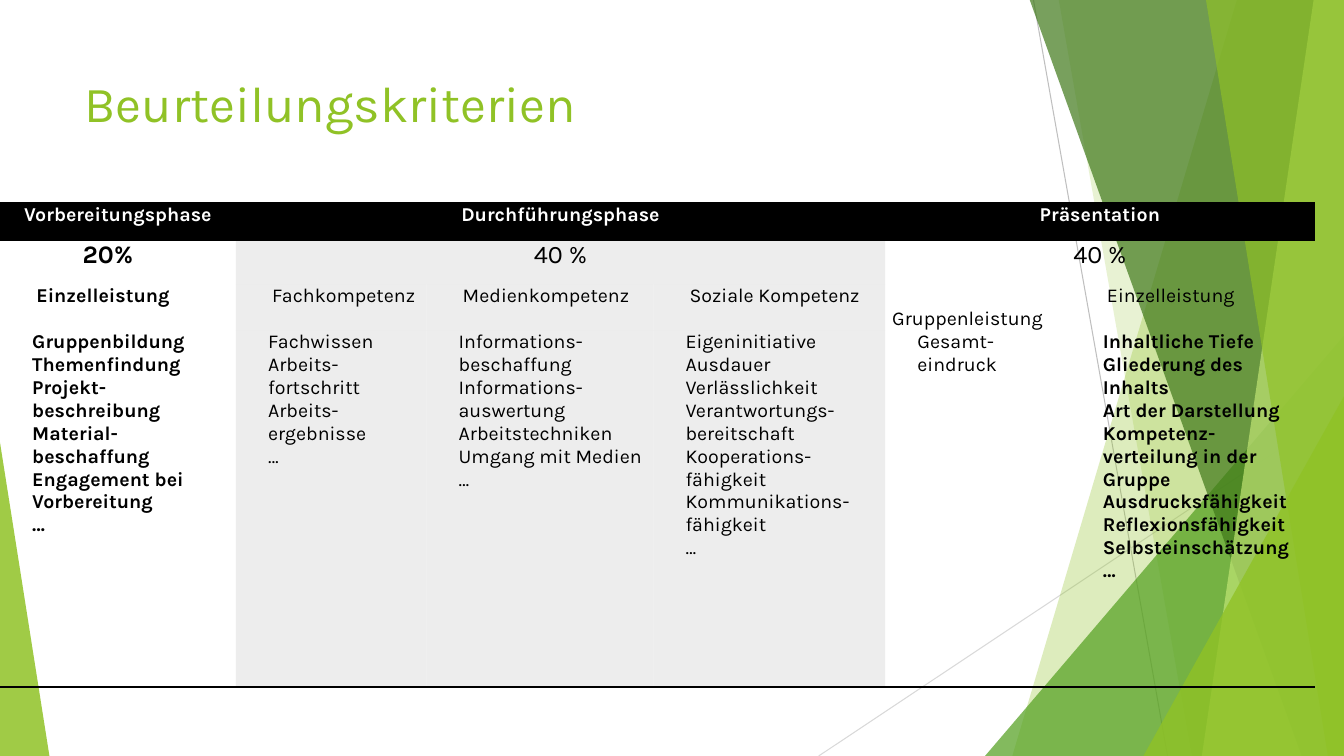
import pptx
import pptx.dml.color
import pptx.enum.shapes
import pptx.enum.text
import pptx.oxml
import pptx.oxml.ns
import pptx.util
from pptx.util import Inches

HUES = {
    "lime": "90C226", "leaf": "54A021", "dark": "3F7819", "pale": "C0E474",
    "black": "000000", "white": "FFFFFF", "gray": "E7E7E7",
    "rule": "BFBFBF", "faint": "D9D9D9",
}
WIDE, HIGH = 13.33, 7.5
PLAIN = "{2D5ABB26-0587-4C30-8999-92F81FD0307C}"
ALIGN = pptx.enum.text.PP_ALIGN
qn = pptx.oxml.ns.qn


class Deck:
    """Holds the style and the current slide."""

    def __init__(self, font):
        self.font = font
        self.show = pptx.Presentation()
        self.show.slide_width = Inches(WIDE)
        self.show.slide_height = Inches(HIGH)
        self.slide = self.show.slides.add_slide(self.show.slide_layouts[6])

    def color(self, name):
        return pptx.dml.color.RGBColor.from_string(HUES[name])

    def paint(self, fill, host, name, alpha=100):
        fill.solid()
        fill.fore_color.rgb = self.color(name)
        if alpha < 100:
            tone = host.find(".//" + qn("a:srgbClr"))
            tone.append(self.node("alpha", val=alpha * 1000))

    def node(self, tag, **attrs):
        item = pptx.oxml.parse_xml(
            f'<a:{tag} xmlns:a="http://schemas.openxmlformats.org/drawingml/2006/main"/>')
        for key, val in attrs.items():
            item.set(key, str(val))
        return item

    def finish(self, shape, name, alpha):
        shape.shadow.inherit = False
        self.paint(shape.fill, shape._element.spPr, name, alpha)
        shape.line.fill.background()

    def line(self, start, end, name):
        straight = pptx.enum.shapes.MSO_CONNECTOR.STRAIGHT
        ends = [Inches(v) for v in start + end]
        rule = self.slide.shapes.add_connector(straight, *ends)
        rule.line.color.rgb = self.color(name)
        rule.line.width = pptx.util.Pt(0.75)
        rule._element.spPr.append(self.node("effectLst"))

    def shard(self, top, foot, name, alpha):
        """A band from a slanted left edge to the right side of the slide."""
        pen = self.slide.shapes.build_freeform(Inches(top), Inches(-0.01))
        dots = [(WIDE, -0.01), (WIDE, HIGH), (foot, HIGH)]
        pen.add_line_segments([(Inches(x), Inches(y)) for x, y in dots], close=True)
        self.finish(pen.convert_to_shape(), name, alpha)

    def wedge(self, box, peak, name, alpha):
        kind = pptx.enum.shapes.MSO_SHAPE.ISOSCELES_TRIANGLE
        shape = self.slide.shapes.add_shape(kind, *[Inches(v) for v in box])
        shape.adjustments[0] = peak
        self.finish(shape, name, alpha)

    def text(self, frame, lines, size, name, bold=False, align=ALIGN.LEFT, indent=0):
        frame.word_wrap = True
        style = {"name": self.font, "size": pptx.util.Pt(size), "bold": bold}
        for i, words in enumerate(lines):
            para = frame.add_paragraph() if i else frame.paragraphs[0]
            para.alignment = align
            if indent:
                para._p.get_or_add_pPr().set("marL", str(Inches(indent)))
            run = para.add_run()
            run.text = words
            for key, val in style.items():
                setattr(run.font, key, val)
            run.font.color.rgb = self.color(name)

    def title(self, box, words):
        frame = self.slide.shapes.add_textbox(*[Inches(v) for v in box]).text_frame
        self.text(frame, [words], 36, "lime")

    def table(self, left, top, cols, rows):
        box = [Inches(v) for v in (left, top, sum(cols), sum(rows))]
        grid = self.slide.shapes.add_table(len(rows), len(cols), *box).table
        grid.first_row = grid.horz_banding = False
        grid._tbl.tblPr.find(qn("a:tableStyleId")).text = PLAIN
        for col, width in zip(grid.columns, cols):
            col.width = Inches(width)
        for row, height in zip(grid.rows, rows):
            row.height = Inches(height)
        return grid

    def cell(self, cell, fill=None, alpha=100, edges=()):
        gaps = {"margin_left": 0.07, "margin_right": 0.07,
                "margin_top": 0, "margin_bottom": 0}
        for key, val in gaps.items():
            setattr(cell, key, Inches(val))
        props = cell._tc.get_or_add_tcPr()
        if fill:
            self.paint(cell.fill, props, fill, alpha)
        else:
            cell.fill.background()
        for spot, tag in enumerate(edges):
            edge = self.node(tag, w=pptx.util.Pt(2))
            solid = self.node("solidFill")
            solid.append(self.node("srgbClr", val=HUES["black"]))
            edge.append(solid)
            props.insert(spot, edge)


# Phases: name, weight, first column, last column
PHASES = [("Vorbereitungsphase", "20%", 0, 0),
          ("Durchführungsphase", "40 %", 1, 3),
          ("Präsentation", "40 %", 4, 5)]
# Criteria: heading, bold heading, bold list, entries
TOPICS = [
    ("Einzelleistung", True, True,
     ["Gruppenbildung", "Themenfindung", "Projekt-beschreibung",
      "Material-beschaffung", "Engagement bei Vorbereitung", "…"]),
    ("Fachkompetenz", False, False,
     ["Fachwissen", "Arbeits-fortschritt", "Arbeits-ergebnisse", "…"]),
    ("Medienkompetenz", False, False,
     ["Informations-beschaffung", "Informations-auswertung",
      "Arbeitstechniken", "Umgang mit Medien", "…"]),
    ("Soziale Kompetenz", False, False,
     ["Eigeninitiative", "Ausdauer", "Verlässlichkeit",
      "Verantwortungs-bereitschaft", "Kooperations-fähigkeit",
      "Kommunikations-fähigkeit", "…"]),
    ("Gruppenleistung", False, False, ["Gesamt-eindruck"]),
    ("Einzelleistung", False, True,
     ["Inhaltliche Tiefe", "Gliederung des Inhalts", "Art der Darstellung",
      "Kompetenz-verteilung in der Gruppe", "Ausdrucksfähigkeit",
      "Reflexionsfähigkeit", "Selbsteinschätzung", "…"]),
]


def main():
    deck = Deck("Karla")

    # Backdrop, from back to front
    deck.line((10.25, 0), (11.58, HIGH), "rule")
    deck.line((WIDE, 4.03), (8.12, HIGH), "faint")
    deck.shard(12.27, 10.04, "lime", 30)
    deck.shard(10.5, 11.82, "lime", 20)
    deck.wedge((9.77, 3.33, 3.56, 4.17), 1, "leaf", 72)
    deck.shard(10.21, 12.91, "dark", 70)
    deck.shard(13.03, 11.92, "pale", 70)
    deck.shard(11.96, 13.17, "lime", 65)
    deck.wedge((11.34, 3.93, 1.99, 3.57), 1, "lime", 80)
    deck.wedge((0, 4.39, 0.49, 3.11), 0, "lime", 85)

    deck.title((0.74, 0.67, 9.4, 1.44), "Beurteilungskriterien")

    # Table grid: black head, gray middle phase, rule at the foot
    grid = deck.table(0, 2.02, [2.34, 1.89, 2.25, 2.3, 1.84, 2.42],
                      [0.36, 0.44, 0.46, 3.53])
    edges = {0: ("lnT", "lnB"), 3: ("lnB",)}
    for r in range(4):
        for c in range(6):
            fill = "black" if r == 0 else "gray" if 1 <= c <= 3 else None
            deck.cell(grid.cell(r, c), fill, 72 if r else 100, edges.get(r, ()))

    # Phases and weights
    for name, weight, first, last in PHASES:
        for r in range(2):
            if last > first:
                grid.cell(r, first).merge(grid.cell(r, last))
        deck.text(grid.cell(0, first).text_frame, [name], 14, "white", True, ALIGN.CENTER)
        deck.text(grid.cell(1, first).text_frame, [weight], 18, "black",
                  first == 0, ALIGN.CENTER)
    grid.cell(1, 0).margin_right = Inches(0.27)

    # Criteria
    for c, (head, strong, heavy, items) in enumerate(TOPICS):
        low = head == "Gruppenleistung"
        spot = grid.cell(2, c)
        if low:
            spot.margin_top = Inches(0.23)
        deck.text(spot.text_frame, [head], 14, "black", strong, indent=0 if low else 0.29)
        deck.text(grid.cell(3, c).text_frame, items, 14, "black", heavy, indent=0.25)

    deck.show.save("out.pptx")


if __name__ == "__main__":
    main()
